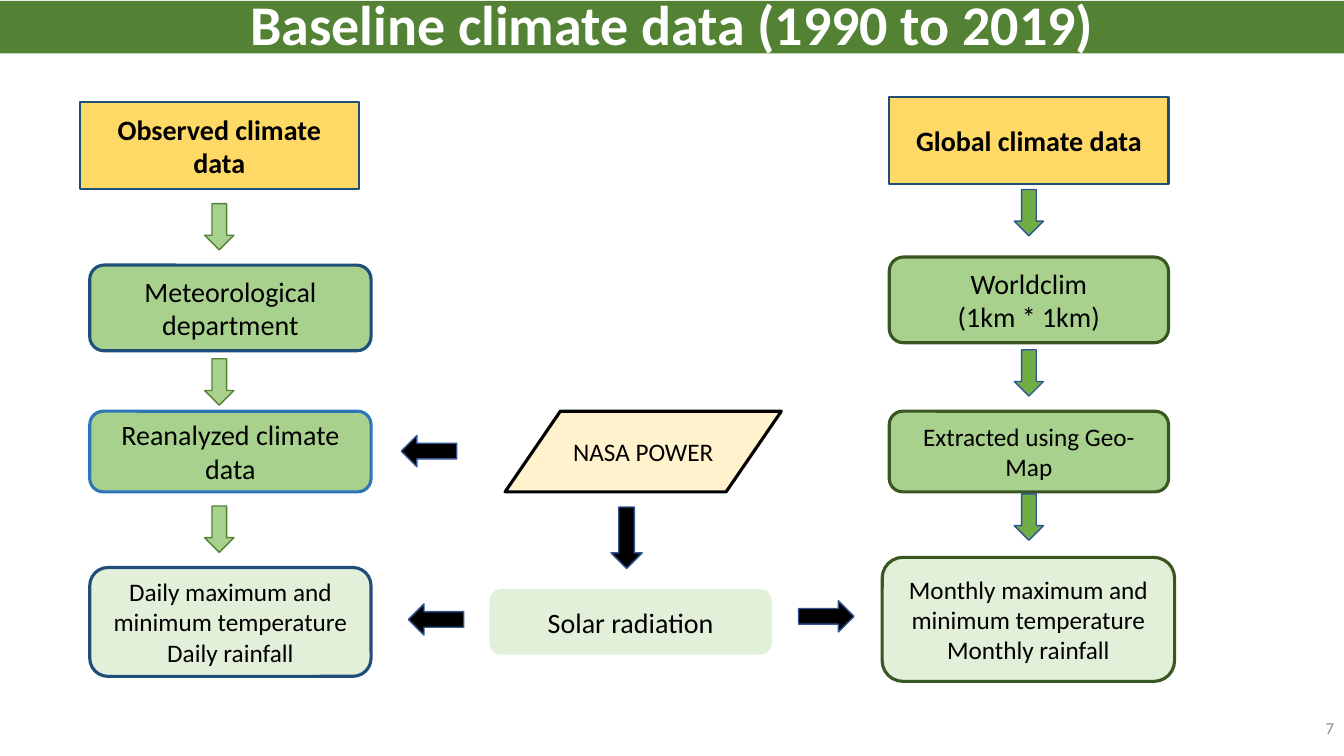
from dataclasses import dataclass

from pptx import Presentation
from pptx.dml.color import RGBColor
from pptx.enum.shapes import MSO_SHAPE
from pptx.enum.text import MSO_ANCHOR, MSO_AUTO_SIZE, PP_ALIGN
from pptx.shapes.autoshape import Shape
from pptx.slide import Slide
from pptx.text.text import TextFrame
from pptx.util import Emu, Pt

PX = 9144
FONT = "Calibri"
BLACK = RGBColor(0x00, 0x00, 0x00)
WHITE = RGBColor(0xFF, 0xFF, 0xFF)
GRAY = RGBColor(0x8C, 0x8C, 0x8C)
GOLD = RGBColor(0xFF, 0xD9, 0x66)
CREAM = RGBColor(0xFF, 0xF2, 0xCC)
NAVY = RGBColor(0x1F, 0x4E, 0x79)
BLUE = RGBColor(0x2E, 0x75, 0xB6)
ARROW_BLUE = RGBColor(0x32, 0x54, 0x91)
PALE_GREEN = RGBColor(0xE2, 0xF0, 0xD9)
LIGHT_GREEN = RGBColor(0xA9, 0xD1, 0x8E)
GREEN = RGBColor(0x70, 0xAD, 0x47)
TITLE_GREEN = RGBColor(0x54, 0x82, 0x35)
DARK_GREEN = RGBColor(0x38, 0x57, 0x23)

RECTANGLE = MSO_SHAPE.RECTANGLE
ROUNDED = MSO_SHAPE.ROUNDED_RECTANGLE
PARALLELOGRAM = MSO_SHAPE.FLOWCHART_DATA
DOWN = MSO_SHAPE.DOWN_ARROW
RIGHT = MSO_SHAPE.RIGHT_ARROW


@dataclass(frozen=True)
class Bounds:
    left: int
    top: int
    width: int
    height: int

    def emu(self) -> tuple[Emu, Emu, Emu, Emu]:
        return (Emu(self.left * PX), Emu(self.top * PX),
                Emu(self.width * PX), Emu(self.height * PX))


@dataclass(frozen=True)
class Box:
    text: str
    bounds: Bounds
    fill: RGBColor
    line: RGBColor
    size: int = 20
    kind: MSO_SHAPE = ROUNDED
    line_width: float = 2.25
    bold: bool = False


@dataclass(frozen=True)
class Arrow:
    bounds: Bounds
    kind: MSO_SHAPE = DOWN
    fill: RGBColor = BLACK
    line: RGBColor = ARROW_BLUE
    rotation: int = 0


BOXES = (
    Box("Observed climate data", Bounds(79, 101, 277, 87), GOLD, NAVY,
        kind=RECTANGLE, line_width=1.5, bold=True),
    Box("Meteorological department", Bounds(89, 263, 279, 85), LIGHT_GREEN, NAVY),
    Box("Reanalyzed climate data", Bounds(89, 408, 279, 80), LIGHT_GREEN, BLUE),
    Box("Daily maximum and\nminimum temperature\nDaily rainfall",
        Bounds(89, 563, 279, 108), PALE_GREEN, NAVY, size=18),
    Box("Global climate data", Bounds(882, 96, 277, 87), GOLD, NAVY,
        kind=RECTANGLE, line_width=1.5, bold=True),
    Box("Worldclim\n(1km * 1km)", Bounds(882, 255, 277, 85), LIGHT_GREEN, DARK_GREEN),
    Box("Extracted using Geo-Map", Bounds(882, 408, 277, 80),
        LIGHT_GREEN, DARK_GREEN, size=18),
    Box("Monthly maximum and\nminimum temperature\nMonthly rainfall",
        Bounds(875, 553, 290, 123), PALE_GREEN, DARK_GREEN, size=18),
    Box("Solar radiation", Bounds(487, 586, 277, 62), PALE_GREEN, PALE_GREEN),
    Box("NASA POWER", Bounds(501, 408, 274, 80), CREAM, BLACK,
        size=18, kind=PARALLELOGRAM),
)

ARROWS = (
    *(Arrow(Bounds(203, top, 29, 46), fill=LIGHT_GREEN, line=TITLE_GREEN)
      for top in (202, 356, 502)),
    *(Arrow(Bounds(1006, top, 29, 46), fill=GREEN) for top in (188, 347, 490)),
    Arrow(Bounds(606, 503, 31, 61)),
    Arrow(Bounds(792, 596, 55, 31), RIGHT),
    Arrow(Bounds(398, 432, 55, 31), RIGHT, rotation=180),
    Arrow(Bounds(405, 599, 55, 31), RIGHT, rotation=180),
)


def write_text(frame: TextFrame, text: str, size: int, color: RGBColor,
               bold: bool = False, alignment: PP_ALIGN = PP_ALIGN.CENTER) -> None:
    frame.text = text
    frame.word_wrap = True
    frame.auto_size = MSO_AUTO_SIZE.NONE
    frame.vertical_anchor = MSO_ANCHOR.MIDDLE
    for paragraph in frame.paragraphs:
        paragraph.alignment = alignment
        paragraph.font.name = FONT
        paragraph.font.size = Pt(size)
        paragraph.font.bold = bold
        paragraph.font.color.rgb = color


def add_filled_shape(slide: Slide, kind: MSO_SHAPE, bounds: Bounds,
                     fill: RGBColor, line: RGBColor, line_width: float) -> Shape:
    shape = slide.shapes.add_shape(kind, *bounds.emu())
    shape.shadow.inherit = False
    shape.fill.solid()
    shape.fill.fore_color.rgb = fill
    shape.line.color.rgb = line
    shape.line.width = Pt(line_width)
    return shape


def add_box(slide: Slide, box: Box) -> None:
    shape = add_filled_shape(slide, box.kind, box.bounds, box.fill, box.line,
                             box.line_width)
    write_text(shape.text_frame, box.text, box.size, BLACK, box.bold)


def add_arrow(slide: Slide, arrow: Arrow) -> None:
    shape = add_filled_shape(slide, arrow.kind, arrow.bounds, arrow.fill, arrow.line, 1)
    shape.rotation = arrow.rotation


def format_title(slide: Slide) -> None:
    title = slide.shapes.title
    title.left, title.top, title.width, title.height = Bounds(0, 1, 1333, 52).emu()
    title.fill.solid()
    title.fill.fore_color.rgb = TITLE_GREEN
    write_text(title.text_frame, "Baseline climate data (1990 to 2019)", 40, WHITE, True)
    title.text_frame.paragraphs[0].line_spacing = 0.9


def add_page_number(slide: Slide) -> None:
    text_box = slide.shapes.add_textbox(*Bounds(1033, 702, 300, 40).emu())
    write_text(text_box.text_frame, "7", 12, GRAY, alignment=PP_ALIGN.RIGHT)


def main() -> None:
    presentation = Presentation()
    presentation.slide_width = Emu(1333 * PX)
    presentation.slide_height = Emu(750 * PX)
    slide = presentation.slides.add_slide(presentation.slide_layouts[5])
    format_title(slide)
    add_page_number(slide)
    for box in BOXES:
        add_box(slide, box)
    for arrow in ARROWS:
        add_arrow(slide, arrow)
    presentation.save("out.pptx")


if __name__ == "__main__":
    main()
